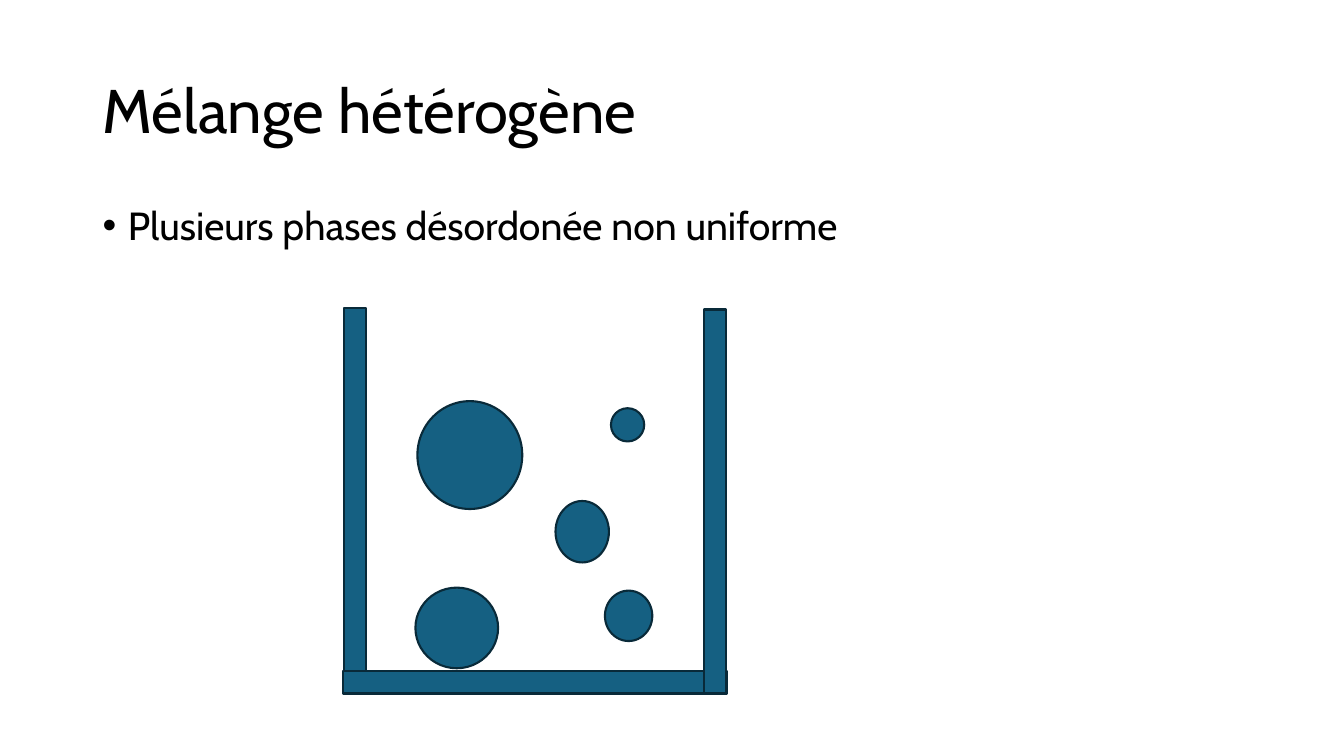
from dataclasses import dataclass

from lxml.etree import SubElement
from pptx import Presentation
from pptx.dml.color import RGBColor
from pptx.enum.shapes import MSO_SHAPE
from pptx.enum.text import MSO_ANCHOR
from pptx.oxml.ns import qn
from pptx.util import Emu, Pt

PX = 9144


@dataclass(frozen=True)
class Theme:
    font: str = "Cabin"
    ink: str = "000000"
    fill: str = "156082"
    outline: str = "092A39"
    title: int = 44
    body: int = 28
    line: float = 1.5


class Deck:
    def __init__(self, theme, width, height):
        self.theme = theme
        self.prs = Presentation()
        self.prs.slide_width = Emu(width * PX)
        self.prs.slide_height = Emu(height * PX)
        self.slide = self.prs.slides.add_slide(self.prs.slide_layouts[6])

    def text(self, box, words, size, anchor=MSO_ANCHOR.TOP):
        tf = self.slide.shapes.add_textbox(*(Emu(v * PX) for v in box)).text_frame
        tf.word_wrap = True
        tf.vertical_anchor = anchor
        p = tf.paragraphs[0]
        p.line_spacing = 0.9
        r = p.add_run()
        r.text = words
        r.font.name = self.theme.font
        r.font.size = Pt(size)
        r.font.color.rgb = RGBColor.from_string(self.theme.ink)
        return p

    def bullet(self, box, words, size):
        p = self.text(box, words, size)
        p.space_before = Pt(10)
        pPr = p._p.get_or_add_pPr()
        pPr.set("marL", str(25 * PX))
        pPr.set("indent", str(-25 * PX))
        SubElement(pPr, qn("a:buFont")).set("typeface", "Arial")
        SubElement(pPr, qn("a:buChar")).set("char", "•")

    def shape(self, kind, box):
        sp = self.slide.shapes.add_shape(kind, *(Emu(v * PX) for v in box))
        sp.shadow.inherit = False
        sp.fill.solid()
        sp.fill.fore_color.rgb = RGBColor.from_string(self.theme.fill)
        sp.line.color.rgb = RGBColor.from_string(self.theme.outline)
        sp.line.width = Pt(self.theme.line)

    def wall(self, *box):
        self.shape(MSO_SHAPE.RECTANGLE, box)

    def bubble(self, *box):
        self.shape(MSO_SHAPE.FLOWCHART_CONNECTOR, box)

    def save(self):
        self.prs.save("out.pptx")


def main():
    theme = Theme()
    s = Deck(theme, 1333, 750)
    s.text((92, 40, 1150, 145), "Mélange hétérogène", theme.title, MSO_ANCHOR.MIDDLE)
    s.bullet((92, 200, 1150, 476), "Plusieurs phases désordonée non uniforme", theme.body)

    thick, length = 22, 381
    s.wall(341, 306, thick, length)
    s.wall(340, 666, length, thick)
    s.wall(698, 307, thick, length)

    bubbles = [
        (414, 398, 104, 107),
        (600, 586, 47, 50),
        (551, 497, 53, 61),
        (606, 405, 33, 33),
        (412, 583, 82, 80),
    ]
    for box in bubbles:
        s.bubble(*box)
    s.save()


if __name__ == "__main__":
    main()
